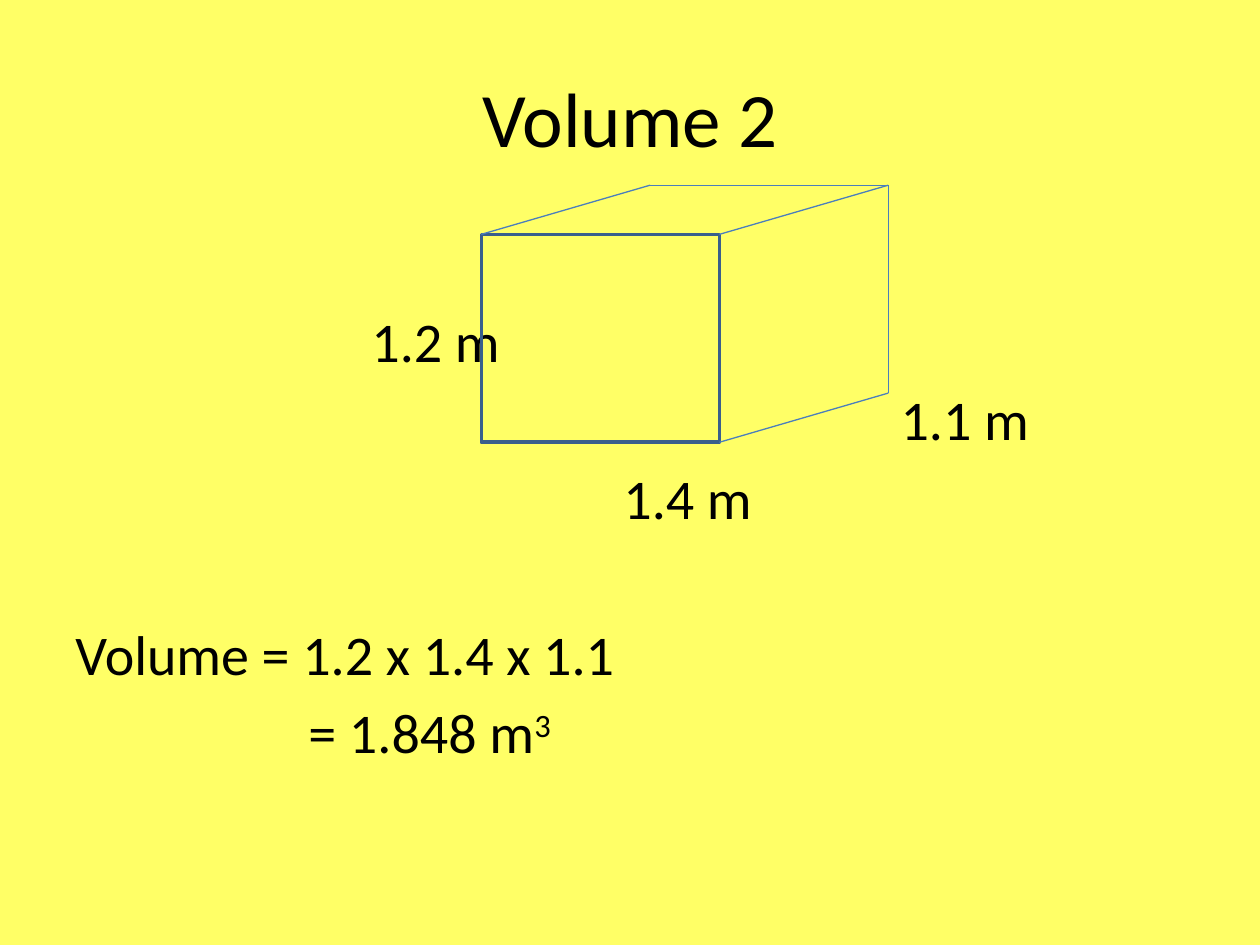
import pptx
import pptx.dml.color
import pptx.enum.shapes
import pptx.enum.text
import pptx.oxml.ns
import pptx.util
import lxml.etree

Inches, Pt = pptx.util.Inches, pptx.util.Pt


def rgb(value):
    return pptx.dml.color.RGBColor.from_string(value)


class SlideBuilder:
    TEXT = {"name": "Calibri", "bold": False}
    INK, EDGE, FACE = "000000", "4B7EBC", "3A5F8C"

    def __init__(self, slide, background):
        self.slide = slide
        slide.background.fill.solid()
        slide.background.fill.fore_color.rgb = rgb(background)

    def run(self, p, text, size, superscript=False):
        r = p.add_run()
        r.text = text
        for key, value in {**self.TEXT, "size": Pt(size)}.items():
            setattr(r.font, key, value)
        r.font.color.rgb = rgb(self.INK)
        if superscript:
            r._r.get_or_add_rPr().set("baseline", "30000")

    def title(self, text, box, size):
        sp = self.slide.shapes.title
        sp.left, sp.top, sp.width, sp.height = map(Inches, box)
        sp.text_frame.vertical_anchor = pptx.enum.text.MSO_ANCHOR.MIDDLE
        p = sp.text_frame.paragraphs[0]
        p.alignment = pptx.enum.text.PP_ALIGN.CENTER
        self.run(p, text, size)

    def body(self, lines, box, size, top_inset):
        """Each line is (text, superscript, left indent, space before)."""
        tf = self.slide.shapes.add_textbox(*map(Inches, box)).text_frame
        tf.word_wrap = True
        tf.margin_top = Inches(top_inset)
        for i, (text, power, indent, gap) in enumerate(lines):
            p = tf.add_paragraph() if i else tf.paragraphs[0]
            p.space_before = Pt(gap)
            p._p.get_or_add_pPr().set("marL", str(Inches(indent)))
            self.run(p, text, size)
            if power:
                self.run(p, power, size, superscript=True)

    def edge(self, group, start, end):
        line = group.shapes.add_connector(
            pptx.enum.shapes.MSO_CONNECTOR.STRAIGHT, *map(Inches, start + end))
        line.line.color.rgb = rgb(self.EDGE)
        line.line.width = Pt(0.75)
        lxml.etree.SubElement(line._element.spPr, pptx.oxml.ns.qn("a:effectLst"))

    def cuboid(self, left, top, width, height, dx, dy):
        group = self.slide.shapes.add_group_shape()
        # Front face
        sp = group.shapes.add_shape(pptx.enum.shapes.MSO_SHAPE.RECTANGLE,
                                    *map(Inches, (left, top, width, height)))
        sp.shadow.inherit = False
        sp.fill.background()
        sp.line.color.rgb = rgb(self.FACE)
        sp.line.width = Pt(2)
        # Receding and back edges
        right, bottom = left + width, top + height
        corners = [(left, top), (right, top), (right, bottom)]
        back = [(x + dx, y - dy) for x, y in corners]
        for start, end in [*zip(corners, back), *zip(back, back[1:])]:
            self.edge(group, start, end)


def main():
    prs = pptx.Presentation()
    prs.slide_width, prs.slide_height = Inches(10), Inches(7.5)
    s = SlideBuilder(prs.slides.add_slide(prs.slide_layouts[5]), "FFFF66")

    s.title("Volume 2", (0.5, 0.3, 9, 1.25), 44)

    # Dimension labels, then the working
    s.body([
        ("1.2 m", "", 2.35, 0),
        ("1.1 m", "", 6.55, 6.4),
        ("1.4 m", "", 4.35, 6.4),
        ("Volume = 1.2 x 1.4 x 1.1", "", 0, 51),
        ("= 1.848 m", "3", 1.85, 6.4),
    ], (0.5, 1.75, 9, 4.95), 32, top_inset=0.68)

    s.cuboid(3.82, 1.86, 1.89, 1.65, dx=1.34, dy=0.39)
    prs.save("out.pptx")


if __name__ == "__main__":
    main()
